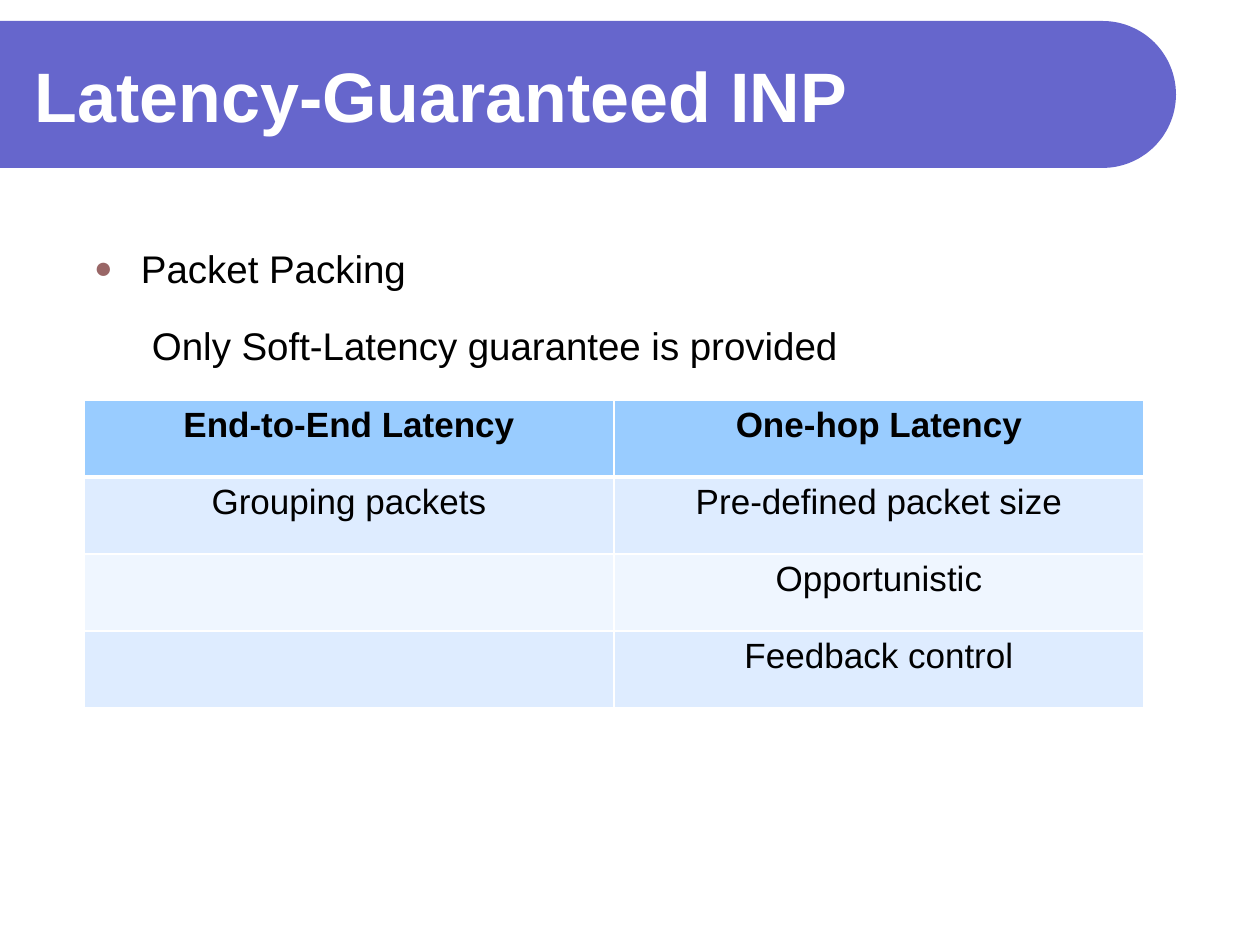
import math
from typing import NamedTuple

from lxml import etree
from pptx import Presentation
from pptx.dml.color import RGBColor
from pptx.enum import text
from pptx.oxml import ns
from pptx.util import Emu, Pt

EMU_PER_PX = 914400 / 126
WHITE, BLACK, BANNER, BULLET = "FFFFFF", "000000", "6666CC", "996666"
HEADER, DARK_BAND, LIGHT_BAND = "99CCFF", "DEECFF", "EFF6FF"


class Box(NamedTuple):
    left: int
    top: int
    width: int
    height: int


class Statement(NamedTuple):
    wording: str
    margin: int
    bulleted: bool


class Row(NamedTuple):
    entries: tuple[str, str]
    fill: str
    header: bool = False


BANNER_BOX = Box(0, 21, 1176, 147)
TITLE_BOX = Box(26, 32, 1105, 126)
BODY_BOX = Box(84, 239, 1092, 604)
TABLE_BOX = Box(84, 400, 1060, 308)
HANGING = 47
STATEMENTS = (
    Statement("Packet Packing", HANGING, True),
    Statement("Only Soft-Latency guarantee is provided", 58, False),
)
ROWS = (
    Row(("End-to-End Latency", "One-hop Latency"), HEADER, True),
    Row(("Grouping packets", "Pre-defined packet size"), DARK_BAND),
    Row(("", "Opportunistic"), LIGHT_BAND),
    Row(("", "Feedback control"), DARK_BAND),
)


def px(length: float) -> Emu:
    return Emu(round(length * EMU_PER_PX))


def colour(value: str) -> RGBColor:
    return RGBColor.from_string(value)


def apply(target, values: dict) -> None:
    for name, value in values.items():
        setattr(target, name, value)


def style(font, size: int, fill: str, bold: bool = False) -> None:
    apply(font, {"name": "Arial", "size": Pt(size), "bold": bold})
    font.color.rgb = colour(fill)


def place(shape, box: Box) -> None:
    apply(shape, {name: px(length) for name, length in box._asdict().items()})


def draw_banner(slide, box: Box) -> None:
    radius = box.height / 2
    centre_x, centre_y = box.left + box.width - radius, box.top + radius
    arc = [
        (px(centre_x + radius * math.cos(math.radians(angle))),
         px(centre_y + radius * math.sin(math.radians(angle))))
        for angle in range(-90, 91, 3)
    ]
    outline = slide.shapes.build_freeform(px(box.left), px(box.top))
    outline.add_line_segments(arc + [(px(box.left), px(box.top + box.height))])
    banner = outline.convert_to_shape()
    banner.shadow.inherit = False
    banner.fill.solid()
    banner.fill.fore_color.rgb = colour(BANNER)
    banner.line.fill.background()
    slide.shapes._spTree.insert(2, banner._element)


def write_title(slide, wording: str) -> None:
    title = slide.shapes.title
    place(title, TITLE_BOX)
    apply(title.text_frame, {
        "text": wording,
        "word_wrap": True,
        "margin_left": px(9),
        "vertical_anchor": text.MSO_ANCHOR.MIDDLE,
        "auto_size": text.MSO_AUTO_SIZE.NONE,
    })
    paragraph = title.text_frame.paragraphs[0]
    paragraph.alignment = text.PP_ALIGN.LEFT
    style(paragraph.runs[0].font, 40, WHITE, True)


def add_bullet(paragraph) -> None:
    properties = paragraph._p.get_or_add_pPr()
    properties.set("indent", str(-px(HANGING)))
    bullet_colour = etree.SubElement(properties, ns.qn("a:buClr"))
    etree.SubElement(bullet_colour, ns.qn("a:srgbClr"), val=BULLET)
    etree.SubElement(properties, ns.qn("a:buSzPct"), val="80000")
    etree.SubElement(properties, ns.qn("a:buFont"), typeface="Arial")
    etree.SubElement(properties, ns.qn("a:buChar"), char="●")


def write_body(slide, statements: tuple[Statement, ...]) -> None:
    frame = slide.shapes.add_textbox(*map(px, BODY_BOX)).text_frame
    apply(frame, {"word_wrap": True, "margin_left": px(10), "margin_top": px(6)})
    for index, statement in enumerate(statements):
        paragraph = frame.add_paragraph() if index else frame.paragraphs[0]
        paragraph.space_after = Pt(17.5)
        paragraph._p.get_or_add_pPr().set("marL", str(px(statement.margin)))
        if statement.bulleted:
            add_bullet(paragraph)
        run = paragraph.add_run()
        run.text = statement.wording
        style(run.font, 22, BLACK)


def border(cell, widths: dict[str, int]) -> None:
    properties = cell._tc.get_or_add_tcPr()
    for index, (side, width) in enumerate(widths.items()):
        line = etree.Element(ns.qn(f"a:ln{side}"), w=str(Pt(width)))
        fill = etree.SubElement(line, ns.qn("a:solidFill"))
        etree.SubElement(fill, ns.qn("a:srgbClr"), val=WHITE)
        properties.insert(index, line)


def draw_table(slide, rows: tuple[Row, ...]) -> None:
    columns = len(rows[0].entries)
    table = slide.shapes.add_table(len(rows), columns, *map(px, TABLE_BOX)).table
    for row_index, row in enumerate(rows):
        table.rows[row_index].height = px(TABLE_BOX.height / len(rows))
        below_header = row_index > 0 and rows[row_index - 1].header
        for column_index, entry in enumerate(row.entries):
            cell = table.cell(row_index, column_index)
            cell.fill.solid()
            cell.fill.fore_color.rgb = colour(row.fill)
            border(cell, {"L": 1, "R": 1, "T": 3 if below_header else 1,
                          "B": 3 if row.header else 1})
            paragraph = cell.text_frame.paragraphs[0]
            paragraph.alignment = text.PP_ALIGN.CENTER
            if entry:
                run = paragraph.add_run()
                run.text = entry
                style(run.font, 20, BLACK, row.header)


def main() -> None:
    deck = Presentation()
    apply(deck, {"slide_width": px(1260), "slide_height": px(945)})
    slide = deck.slides.add_slide(deck.slide_layouts[5])
    draw_banner(slide, BANNER_BOX)
    write_title(slide, "Latency-Guaranteed INP")
    write_body(slide, STATEMENTS)
    draw_table(slide, ROWS)
    deck.save("out.pptx")


if __name__ == "__main__":
    main()
